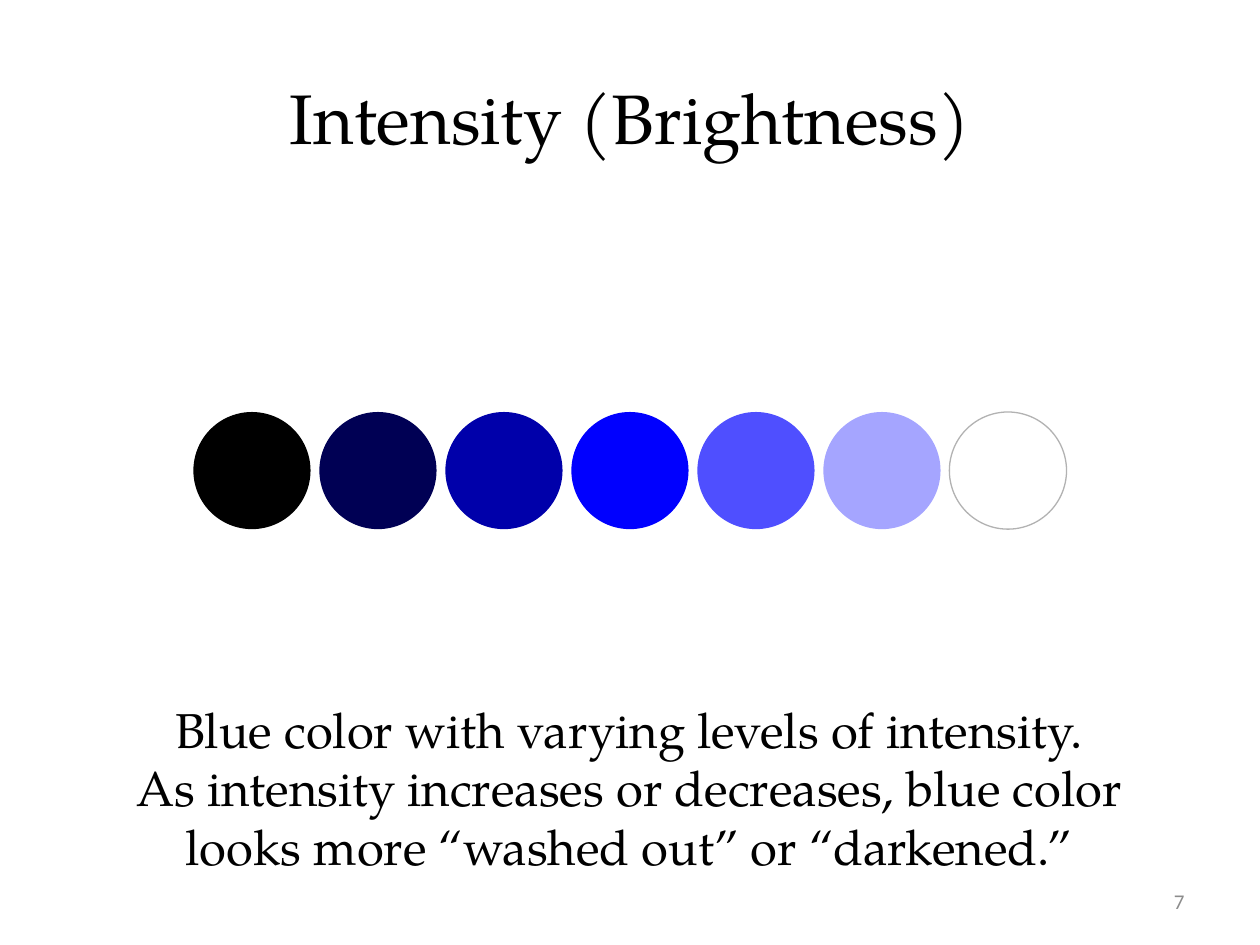
from dataclasses import dataclass

from pptx import Presentation
from pptx.dml.color import RGBColor
from pptx.enum.shapes import MSO_SHAPE
from pptx.enum.text import MSO_ANCHOR, PP_ALIGN
from pptx.util import Inches, Pt

OVAL = MSO_SHAPE.OVAL
MIDDLE, TOP = MSO_ANCHOR.MIDDLE, MSO_ANCHOR.TOP
CENTER, RIGHT = PP_ALIGN.CENTER, PP_ALIGN.RIGHT

# Content
TITLE = "Intensity (Brightness)"
CAPTION = [
    "Blue color with varying levels of intensity.",
    "As intensity increases or decreases, blue color",
    "looks more “washed out” or “darkened.”",
]
PAGE_NUMBER = "7"
INTENSITIES = ["000000", "000054", "0000AA", "0000FF", "4F4FFF", "A5A5FF", "FFFFFF"]


@dataclass(frozen=True)
class Theme:
    serif: str = "TeX Gyre Pagella"
    sans: str = "Calibri"
    ink: str = "000000"
    muted: str = "8C8C8C"
    outline: str = "B2B2B2"
    paper: str = "FFFFFF"
    title_size: int = 40
    caption_size: int = 28
    number_size: int = 12


THEME = Theme()

# Layout, in inches
WIDTH, HEIGHT = 10, 7.5
MARGIN = 0.05 * WIDTH
PITCH, DIAMETER = 0.1 * WIDTH, 0.93
ROW_TOP = 3.27
ROW_LEFT = (WIDTH - PITCH * (len(INTENSITIES) - 1) - DIAMETER) / 2


def write(frame, lines, size, font, color, align, anchor, wrap=True):
    frame.word_wrap = wrap
    frame.vertical_anchor = anchor
    frame.text = "\n".join(lines)
    for paragraph in frame.paragraphs:
        paragraph.alignment = align
        paragraph.font.size = Pt(size)
        paragraph.font.name = font
        paragraph.font.color.rgb = RGBColor.from_string(color)


def add_text(slide, left, top, width, height):
    box = slide.shapes.add_textbox(*map(Inches, (left, top, width, height)))
    return box.text_frame


def add_swatch(slide, column, color):
    left = ROW_LEFT + column * PITCH
    swatch = slide.shapes.add_shape(
        OVAL, *map(Inches, (left, ROW_TOP, DIAMETER, DIAMETER)))
    swatch.shadow.inherit = False
    swatch.fill.solid()
    swatch.fill.fore_color.rgb = RGBColor.from_string(color)
    # Only the swatch that matches the background needs an outline
    if color == THEME.paper:
        swatch.line.color.rgb = RGBColor.from_string(THEME.outline)
        swatch.line.width = Pt(0.75)
    else:
        swatch.line.fill.background()


def main():
    deck = Presentation()
    deck.slide_width, deck.slide_height = Inches(WIDTH), Inches(HEIGHT)
    slide = deck.slides.add_slide(deck.slide_layouts.get_by_name("Title Only"))

    # Title
    title = slide.shapes.title
    title.left, title.top = Inches(MARGIN), Inches(0.04 * HEIGHT)
    title.width, title.height = Inches(WIDTH - 2 * MARGIN), Inches(1.25)
    write(title.text_frame, [TITLE], THEME.title_size, THEME.serif,
          THEME.ink, CENTER, MIDDLE)

    # Row of swatches, dark to light
    for column, color in enumerate(INTENSITIES):
        add_swatch(slide, column, color)

    # Caption
    write(add_text(slide, 0.98, 5.5, 8.02, 1.5), CAPTION, THEME.caption_size,
          THEME.serif, THEME.ink, CENTER, TOP, wrap=False)

    # Page number, flush with the right margin
    number_width = 2.33
    write(add_text(slide, WIDTH - MARGIN - number_width, 6.95, number_width, 0.4),
          [PAGE_NUMBER], THEME.number_size, THEME.sans, THEME.muted, RIGHT, MIDDLE)

    deck.save("out.pptx")


if __name__ == "__main__":
    main()
